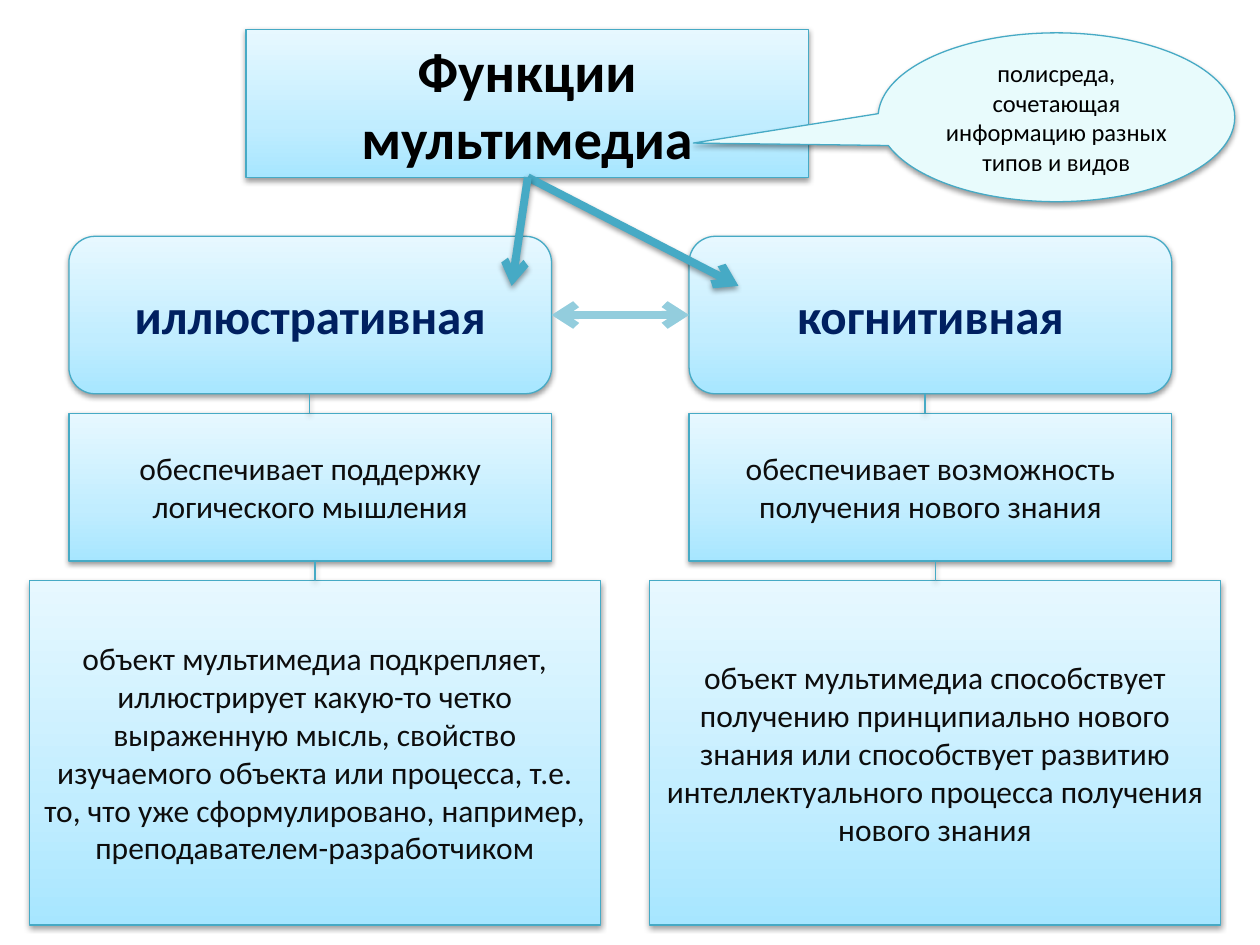
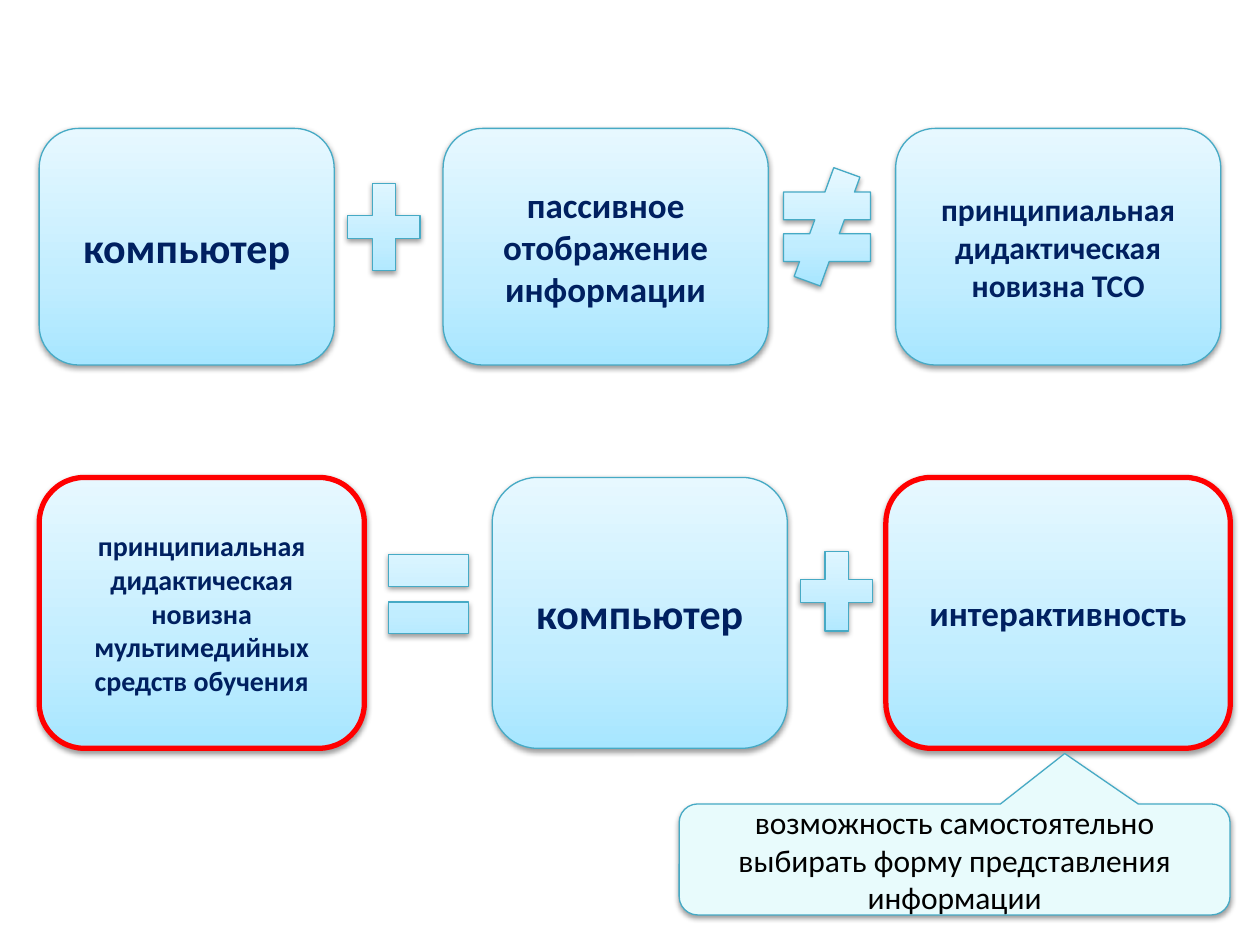
from dataclasses import dataclass

from lxml import etree
from pptx import Presentation
from pptx.dml.color import RGBColor
from pptx.enum import shapes as kinds, text as txt
from pptx.oxml import parse_xml
from pptx.oxml.ns import nsdecls, qn
from pptx.util import Pt

# Shared look
FONT = "Calibri"
BLACK = RGBColor(0x00, 0x00, 0x00)
INK = RGBColor(0x0D, 0x0D, 0x0D)
NAVY = RGBColor(0x00, 0x20, 0x60)
TEAL = RGBColor(0x46, 0xAA, 0xC5)
PALE = RGBColor(0x93, 0xCD, 0xDD)
RED = RGBColor(0xFF, 0x00, 0x00)
MINT = RGBColor(0xE8, 0xFB, 0xFC)
BLEND = (
    (0, RGBColor(0xA7, 0xE6, 0xFF)),
    (35, RGBColor(0xC1, 0xED, 0xFF)),
    (100, RGBColor(0xE7, 0xF8, 0xFF)),
)
THIN, BOLD, FRAME = 0.75, 4.5, 3
KIND = kinds.MSO_SHAPE
ROUND, RECT = KIND.ROUNDED_RECTANGLE, KIND.RECTANGLE


@dataclass
class Box:
    """A blended or plain shape; lengths in points."""
    left: float
    top: float
    width: float
    height: float
    words: str = ""
    size: float = 18
    color: RGBColor = INK
    bold: bool = False
    kind: int = RECT
    edge: RGBColor = TEAL
    weight: float = THIN
    fill: RGBColor | None = None
    tip: tuple[float, ...] = ()


@dataclass
class Link:
    """A straight line; lengths in points."""
    start: tuple[float, float]
    end: tuple[float, float]
    color: RGBColor = TEAL
    weight: float = THIN
    heads: tuple[str, ...] = ()
    shade: bool = True


def add_shade(props, shade: bool = True) -> None:
    """Give a shape its soft shadow, or an empty effect list."""
    effects = etree.SubElement(props, qn("a:effectLst"))
    if shade:
        drop = etree.SubElement(effects, qn("a:outerShdw"), blurRad=str(Pt(3.15)),
                                dist=str(Pt(1.57)), dir="5400000", rotWithShape="0")
        tone = etree.SubElement(drop, qn("a:srgbClr"), val=str(BLACK))
        etree.SubElement(tone, qn("a:alpha"), val="38000")


def add_blend(props) -> None:
    """Fill a shape with the blue blend, rising from the bottom edge."""
    stops = "".join(f'<a:gs pos="{at * 1000}"><a:srgbClr val="{tone}"/></a:gs>'
                    for at, tone in BLEND)
    props.append(parse_xml(
        f'<a:gradFill {nsdecls("a")} rotWithShape="1"><a:gsLst>{stops}</a:gsLst>'
        '<a:lin ang="16200000" scaled="1"/></a:gradFill>'))


def set_words(shape, box: Box) -> None:
    frame = shape.text_frame
    frame.text = box.words
    frame.word_wrap = True
    frame.auto_size = txt.MSO_AUTO_SIZE.NONE
    frame.vertical_anchor = txt.MSO_ANCHOR.MIDDLE
    para = frame.paragraphs[0]
    para.alignment = txt.PP_ALIGN.CENTER
    for run in para.runs:
        run.font.name = FONT
        run.font.size = Pt(box.size)
        run.font.bold = box.bold
        run.font.color.rgb = box.color


def style(shape, box: Box) -> None:
    props = shape.element.spPr
    if box.fill is None:
        add_blend(props)
    else:
        shape.fill.solid()
        shape.fill.fore_color.rgb = box.fill
    shape.line.color.rgb = box.edge
    shape.line.width = Pt(box.weight)
    add_shade(props)
    if box.words:
        set_words(shape, box)


def draw_box(slide, box: Box) -> None:
    shape = slide.shapes.add_shape(box.kind, Pt(box.left), Pt(box.top),
                                   Pt(box.width), Pt(box.height))
    for index, value in enumerate(box.tip):
        shape.adjustments[index] = value
    style(shape, box)


def draw_title(slide, box: Box) -> None:
    """Turn the title placeholder into a rounded box."""
    title = slide.shapes.title
    title.left, title.top = Pt(box.left), Pt(box.top)
    title.width, title.height = Pt(box.width), Pt(box.height)
    form = etree.SubElement(title.element.spPr, qn("a:prstGeom"), prst="roundRect")
    etree.SubElement(form, qn("a:avLst"))
    style(title, box)


def draw_link(slide, link: Link) -> None:
    line = slide.shapes.add_connector(kinds.MSO_CONNECTOR.STRAIGHT,
                                      *map(Pt, link.start + link.end))
    line.line.color.rgb = link.color
    line.line.width = Pt(link.weight)
    for end in link.heads:
        etree.SubElement(line.line._get_or_add_ln(), qn(f"a:{end}"), type="arrow")
    add_shade(line.element.spPr, link.shade)


def build_roles(slide) -> None:
    """Slide 1: the two functions of multimedia."""
    draw_title(slide, Box(140.6, 16.8, 321.4, 84.5, "Функции мультимедиа", 32, BLACK, True))

    # Two columns: heading, brief, detail and the links between them
    step = 354.4
    columns = (
        ("иллюстративная", "обеспечивает поддержку логического мышления",
         "объект мультимедиа подкрепляет, иллюстрирует какую-то четко выраженную мысль, "
         "свойство изучаемого объекта или процесса, т.е. то, что уже сформулировано, "
         "например, преподавателем-разработчиком", 177),
        ("когнитивная", "обеспечивает возможность получения нового знания",
         "объект мультимедиа способствует получению принципиально нового знания или "
         "способствует развитию интеллектуального процесса получения нового знания", 528.5),
    )
    for index, (head, brief, detail, stem) in enumerate(columns):
        shift = index * step
        draw_box(slide, Box(39.4 + shift, 135, 275.8, 90, head, 28, NAVY, True, ROUND))
        draw_box(slide, Box(39.4 + shift, 236.2, 275.8, 84.4, brief))
        draw_box(slide, Box(16.8 + shift, 331.8, 326.2, 196.8, detail))
        draw_link(slide, Link((stem, 225), (stem, 236.2)))
        draw_link(slide, Link((180 + shift, 320.6), (180 + shift, 331.8)))

    # Arrows from the title and between the headings
    for goal in (422, 292.4):
        draw_link(slide, Link((301.6, 101.3), (goal, 163.4), weight=BOLD, heads=("tailEnd",)))
    draw_link(slide, Link((315.2, 180), (393.8, 180), PALE, BOLD, ("headEnd", "tailEnd"), False))

    draw_box(slide, Box(501.8, 18.8, 203.8, 96.5,
                        "полисреда, сочетающая информацию разных типов и видов", 14, BLACK,
                        kind=KIND.OVAL_CALLOUT, fill=MINT, tip=(-1.018, 0.153)))


def build_sums(slide) -> None:
    """Slide 2: two equations about the computer."""
    # Each row: top, height, then left, width, words, size and framing of its terms
    rows = (
        (73.4, 135.2, (
            (22.4, 168.6, "компьютер", 24, False),
            (253.2, 185.8, "пассивное отображение информации", 20, False),
            (511.8, 185.8, "принципиальная дидактическая новизна ТСО", 18, False))),
        (272.8, 154.8, (
            (22.4, 185.8, "принципиальная дидактическая новизна мультимедийных "
                          "средств обучения", 16, True),
            (281.3, 168.6, "компьютер", 24, False),
            (506.2, 196.8, "интерактивность", 20, True))),
    )
    for top, height, terms in rows:
        for left, width, words, size, framed in terms:
            edge, weight = (RED, FRAME) if framed else (TEAL, THIN)
            draw_box(slide, Box(left, top, width, height, words, size, NAVY, True,
                                ROUND, edge, weight))

    # Signs between the terms
    signs = (
        (KIND.MATH_PLUS, 191.3, 95.8, 56.2, 67.6),
        (KIND.MATH_NOT_EQUAL, 438.8, 95.8, 67.6, 67.6),
        (KIND.MATH_EQUAL, 213.8, 301, 62, 77),
        (KIND.MATH_PLUS, 450, 306.8, 56.2, 62),
    )
    for kind, *place in signs:
        draw_box(slide, Box(*place, kind=kind))

    draw_box(slide, Box(388.1, 459.4, 314.8, 63.4,
                        "возможность самостоятельно выбирать форму представления информации",
                        18, BLACK, kind=KIND.ROUNDED_RECTANGULAR_CALLOUT, fill=MINT,
                        tip=(0.2, -0.955, 0.167)))


def main() -> None:
    deck = Presentation()
    deck.slide_width, deck.slide_height = Pt(720), Pt(540)
    titled, blank = deck.slide_layouts[5], deck.slide_layouts[6]
    build_roles(deck.slides.add_slide(titled))
    build_sums(deck.slides.add_slide(blank))
    deck.save("out.pptx")


if __name__ == "__main__":
    main()
